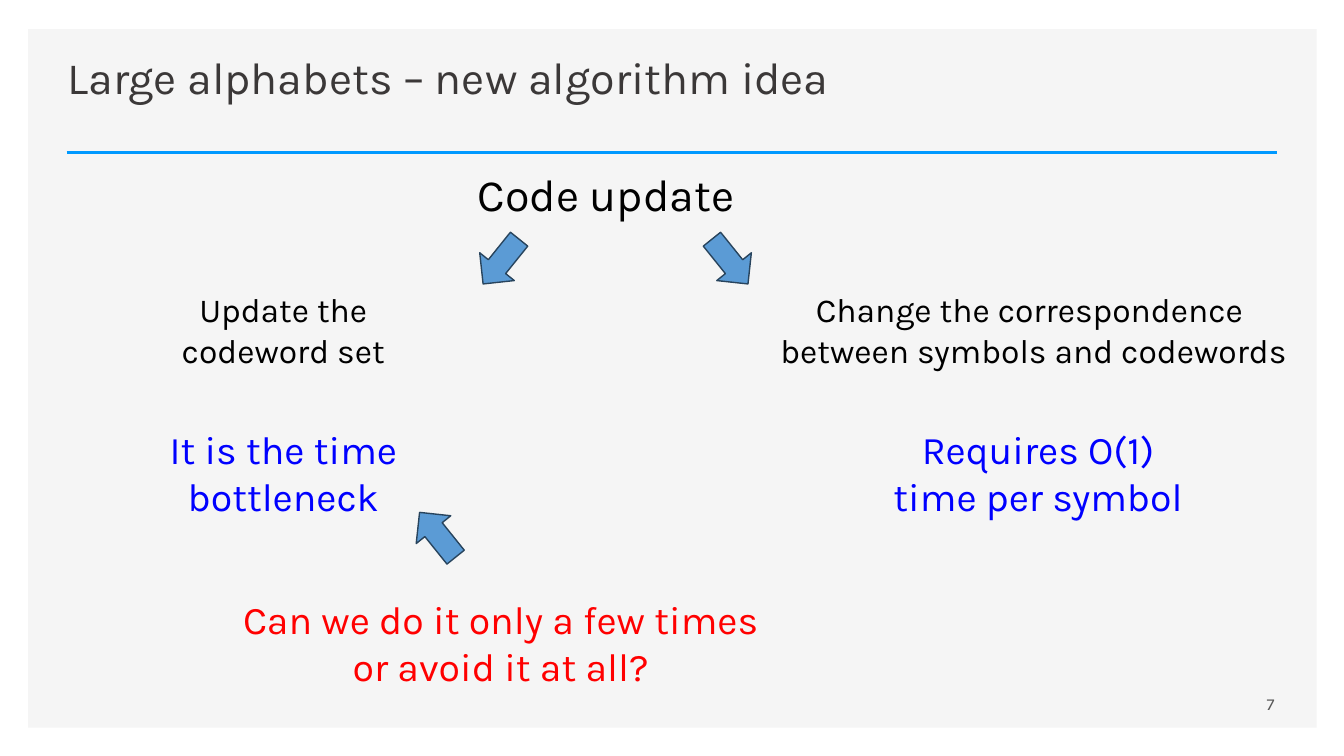
from pptx import Presentation
from pptx.util import Inches, Pt
from pptx.dml.color import RGBColor
from pptx.enum.shapes import MSO_CONNECTOR, MSO_SHAPE
from pptx.enum.text import MSO_ANCHOR, PP_ALIGN
from pptx.oxml.ns import qn
from lxml import etree

FONT = "Karla"
PANEL = RGBColor(0xF5, 0xF5, 0xF5)
RULE = RGBColor(0x00, 0x99, 0xFF)
TITLE = RGBColor(0x3B, 0x38, 0x38)
NUMBER = RGBColor(0x59, 0x59, 0x59)
BLACK = RGBColor(0x00, 0x00, 0x00)
BLUE = RGBColor(0x00, 0x00, 0xFF)
RED = RGBColor(0xFF, 0x00, 0x00)
ARROW_FILL = RGBColor(0x5B, 0x9B, 0xD5)
ARROW_LINE = RGBColor(0x28, 0x44, 0x5D)


def write(sp, text, size=24, color=BLACK, align=PP_ALIGN.CENTER,
          anchor=MSO_ANCHOR.TOP, wrap=True):
    tf = sp.text_frame
    tf.word_wrap = wrap
    tf.vertical_anchor = anchor
    tf.text = text
    for p in tf.paragraphs:
        p.alignment = align
        for r in p.runs:
            r.font.name = FONT
            r.font.size = Pt(size)
            r.font.color.rgb = color


prs = Presentation()
prs.slide_width, prs.slide_height = Inches(13.33), Inches(7.5)
slide = prs.slides.add_slide(prs.slide_layouts[5])
shapes = slide.shapes

# Background panel, moved behind the title
panel = shapes.add_shape(MSO_SHAPE.RECTANGLE, Inches(0.28), Inches(0.29),
                         Inches(12.78), Inches(6.93))
panel.shadow.inherit = False
panel.fill.solid()
panel.fill.fore_color.rgb = PANEL
panel.line.fill.background()
shapes.title.element.addprevious(panel.element)

# Title and rule
title = shapes.title
title.left, title.top = Inches(0.57), Inches(0.38)
title.width, title.height = Inches(11.93), Inches(0.7)
write(title, "Large alphabets – new algorithm idea", size=32, color=TITLE,
      align=PP_ALIGN.LEFT, anchor=MSO_ANCHOR.BOTTOM)
rule = shapes.add_connector(MSO_CONNECTOR.STRAIGHT, Inches(0.66), Inches(1.51),
                            Inches(12.67), Inches(1.51))
rule.line.color.rgb = RULE
rule.line.width = Pt(2)
etree.SubElement(rule.element.spPr, qn("a:effectLst"))

# Statements and slide number
texts = [
    ("Code update", 4.64, 1.6, 2.76, 0.64,
     dict(size=32, align=PP_ALIGN.LEFT, wrap=False)),
    ("Update the codeword set", 1.33, 2.82, 2.96, 0.93, {}),
    ("Change the correspondence \vbetween symbols and codewords",
     7.59, 2.82, 5.32, 0.91, {}),
    ("It is the time bottleneck", 1.33, 4.17, 2.96, 1.04,
     dict(size=28, color=BLUE)),
    ("Requires O(1) time per symbol", 8.59, 4.17, 3.41, 1.04,
     dict(size=28, color=BLUE)),
    ("Can we do it only a few times\nor avoid it at all?",
     1.43, 5.86, 7.07, 1.04, dict(size=28, color=RED)),
    ("7", 9.16, 6.78, 3.58, 0.4,
     dict(size=12, color=NUMBER, align=PP_ALIGN.RIGHT,
          anchor=MSO_ANCHOR.MIDDLE)),
]
for text, x, y, w, h, style in texts:
    box = shapes.add_textbox(Inches(x), Inches(y), Inches(w), Inches(h))
    write(box, text, **style)

# Block arrows: down-left, down-right, up-left
for x, y, angle in [(4.75, 2.31, 38.8), (7.02, 2.31, -38.8), (4.12, 5.02, 141.2)]:
    arrow = shapes.add_shape(MSO_SHAPE.DOWN_ARROW, Inches(x), Inches(y),
                             Inches(0.44), Inches(0.57))
    arrow.rotation = angle
    arrow.shadow.inherit = False
    arrow.fill.solid()
    arrow.fill.fore_color.rgb = ARROW_FILL
    arrow.line.color.rgb = ARROW_LINE
    arrow.line.width = Pt(1)

prs.save("out.pptx")
